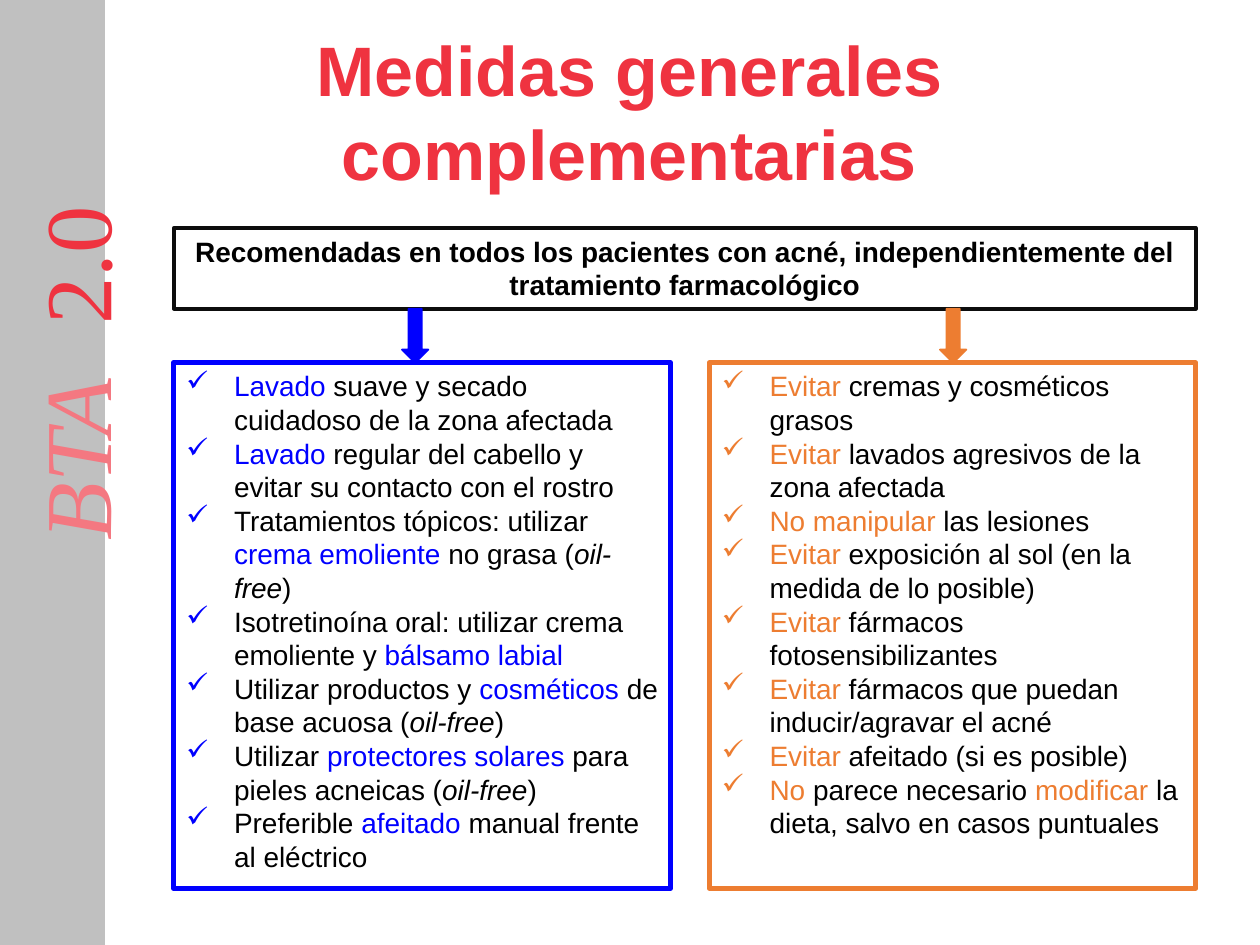
from lxml.etree import SubElement
from pptx import Presentation
from pptx.dml.color import RGBColor
from pptx.enum.shapes import MSO_SHAPE
from pptx.enum.text import MSO_ANCHOR, PP_ALIGN
from pptx.oxml.ns import qn
from pptx.util import Inches, Pt

COLORS = {"red": "EF3340", "pink": "F47881", "band": "C0C0C0", "black": "000000",
          "frame": "0D0D0D", "white": "FFFFFF", "blue": "0000FF", "orange": "ED7D31"}

# Content: a run is plain text or (text, mark); "key" takes the panel colour
TITLE = "Medidas generales complementarias"
ADVICE = ("Recomendadas en todos los pacientes con acné, "
          "independientemente del tratamiento farmacológico")
OIL_FREE = ("oil-free", "italic")
DO = [
    [("Lavado", "key"), " suave y secado cuidadoso de la zona afectada"],
    [("Lavado", "key"), " regular del cabello y evitar su contacto con el rostro"],
    ["Tratamientos tópicos: utilizar ", ("crema emoliente ", "key"), "no grasa (", OIL_FREE, ")"],
    ["Isotretinoína oral: utilizar crema emoliente y ", ("bálsamo labial", "key")],
    ["Utilizar productos y ", ("cosméticos ", "key"), "de base acuosa (", OIL_FREE, ")"],
    ["Utilizar ", ("protectores solares ", "key"), "para pieles acneicas (", OIL_FREE, ")"],
    ["Preferible ", ("afeitado", "key"), " manual frente al eléctrico"],
]
AVOID = [
    [("Evitar ", "key"), "cremas y cosméticos grasos"],
    [("Evitar ", "key"), "lavados agresivos de la zona afectada"],
    [("No manipular ", "key"), "las lesiones"],
    [("Evitar", "key"), " exposición al sol (en la medida de lo posible)"],
    [("Evitar", "key"), " fármacos fotosensibilizantes"],
    [("Evitar", "key"), " fármacos que puedan inducir/agravar el acné"],
    [("Evitar", "key"), " afeitado (si es posible)"],
    [("No ", "key"), "parece necesario ", ("modificar", "key"),
     " la dieta, salvo en casos puntuales"],
]

# Layout
LEFT, RIGHT = 1.38, 9.49
ADVICE_TOP, ADVICE_HEIGHT = 1.81, 0.64
PANEL_TOP, PANEL_HEIGHT = 2.88, 4.17
ARROW_TOP, ARROW_WIDTH = ADVICE_TOP + ADVICE_HEIGHT, 0.21
INDENT = 0.38
# colour, items, panel width, panel left, arrow left
PANELS = [("blue", DO, 3.94, LEFT, 3.19),
          ("orange", AVOID, 3.86, RIGHT - 3.86, 7.46)]

prs = Presentation()
prs.slide_width, prs.slide_height = Inches(10), Inches(7.5)
slide = prs.slides.add_slide(prs.slide_layouts[6])


def rgb(name):
    return RGBColor.from_string(COLORS[name])


def add_box(kind, left, top, width, height, fill=None, line=None, weight=1):
    box = slide.shapes.add_shape(kind, *map(Inches, (left, top, width, height)))
    box.shadow.inherit = False
    if fill:
        box.fill.solid()
        box.fill.fore_color.rgb = rgb(fill)
    else:
        box.fill.background()
    box.line.color.rgb = rgb(line or fill)
    box.line.width = Pt(weight)
    return box


def add_check(paragraph, color):
    props = paragraph._p.get_or_add_pPr()
    props.set("marL", str(Inches(INDENT)))
    props.set("indent", str(-Inches(INDENT)))
    SubElement(SubElement(props, qn("a:buClr")), qn("a:srgbClr")).set("val", COLORS[color])
    SubElement(props, qn("a:buFont")).set("typeface", "Wingdings")
    SubElement(props, qn("a:buChar")).set("char", "ü")


def write(shape, paragraphs, size=16, font="Arial", color="black", key="red", bold=False,
          italic=False, align=PP_ALIGN.LEFT, anchor=MSO_ANCHOR.TOP, check=False, tab=None):
    frame = shape.text_frame
    frame.word_wrap = True
    frame.vertical_anchor = anchor
    for number, runs in enumerate(paragraphs):
        paragraph = frame.add_paragraph() if number else frame.paragraphs[0]
        paragraph.alignment = align
        if check:
            add_check(paragraph, key)
        if tab:
            stops = SubElement(paragraph._p.get_or_add_pPr(), qn("a:tabLst"))
            SubElement(stops, qn("a:tab"), pos=str(Inches(tab)), algn="l")
        for part in runs:
            text, mark = (part, None) if isinstance(part, str) else part
            run = paragraph.add_run()
            run.text = text
            run.font.size, run.font.name = Pt(size), font
            run.font.bold = bold
            run.font.italic = italic or mark == "italic"
            run.font.color.rgb = rgb(key if mark == "key" else color)


# Side band with the programme name
add_box(MSO_SHAPE.RECTANGLE, 0, 0, 0.83, 7.5, fill="band", weight=0.75)
programme = slide.shapes.add_textbox(Inches(-1.03), Inches(2.27), Inches(3.23), Inches(1))
programme.rotation = 270
write(programme, [[("BTA\t", "italic"), ("2.0", "key")]], size=54,
      font="Times New Roman", color="pink", tab=1.71)

# Title
title = slide.shapes.add_textbox(Inches(0.98), Inches(0.09), Inches(8.03), Inches(1.58))
write(title, [[TITLE]], size=40, color="red", bold=True,
      align=PP_ALIGN.CENTER, anchor=MSO_ANCHOR.MIDDLE)

# Panels of measures
for color, items, width, left, _ in PANELS:
    panel = add_box(MSO_SHAPE.ROUNDED_RECTANGLE, left, PANEL_TOP, width, PANEL_HEIGHT,
                    fill="white", line=color, weight=3)
    panel.adjustments[0] = 0
    write(panel, items, key=color, check=True)

# General advice
advice = add_box(MSO_SHAPE.RECTANGLE, LEFT, ADVICE_TOP, RIGHT - LEFT, ADVICE_HEIGHT,
                 line="frame", weight=2.25)
write(advice, [[ADVICE]], bold=True, align=PP_ALIGN.CENTER)

# Arrows from the advice to each panel
for color, *_, arrow_left in PANELS:
    add_box(MSO_SHAPE.DOWN_ARROW, arrow_left, ARROW_TOP, ARROW_WIDTH,
            PANEL_TOP - ARROW_TOP, fill=color)

prs.save("out.pptx")
